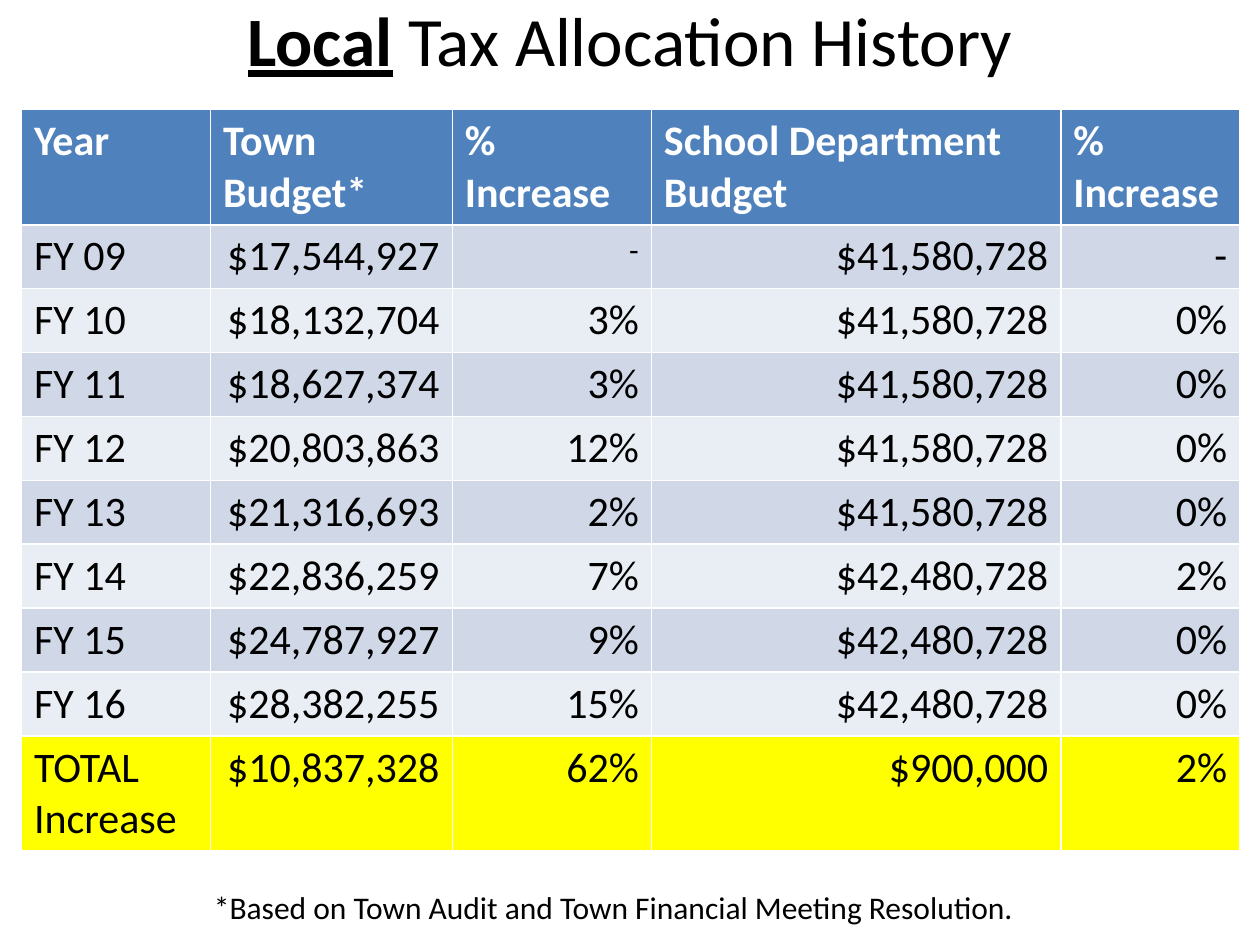
from pptx import Presentation
from pptx.dml.color import RGBColor
from pptx.enum import text
from pptx.util import Inches, Pt


def style(span, color="000000", **values):
    """Apply font values and a hex colour to a run."""
    values = {"name": "Calibri", "bold": False, **values}
    for key, value in values.items():
        setattr(span.font, key, value)
    span.font.color.rgb = RGBColor.from_string(color)


deck = Presentation()
deck.slide_width, deck.slide_height = Inches(10), Inches(7.5)
page = deck.slides.add_slide(deck.slide_layouts[5])

# Title
title = page.shapes.title
title.left, title.top = Inches(0.5), Inches(0)
title.width, title.height = Inches(9), Inches(0.62)
frame = title.text_frame
frame.auto_size = text.MSO_AUTO_SIZE.NONE
frame.vertical_anchor = text.MSO_ANCHOR.MIDDLE
para = frame.paragraphs[0]
para.alignment = text.PP_ALIGN.CENTER
for words, strong in [("Local", True), (" Tax Allocation History", False)]:
    span = para.add_run()
    span.text = words
    style(span, size=Pt(39.6), bold=strong, underline=strong)

# Budget table; the default table style supplies the white borders
rows = [
    ("Year", "Town Budget*", "% Increase", "School Department Budget", "% Increase"),
    ("FY 09", "$17,544,927", "-", "$41,580,728", "-"),
    ("FY 10", "$18,132,704", "3%", "$41,580,728", "0%"),
    ("FY 11", "$18,627,374", "3%", "$41,580,728", "0%"),
    ("FY 12", "$20,803,863", "12%", "$41,580,728", "0%"),
    ("FY 13", "$21,316,693", "2%", "$41,580,728", "0%"),
    ("FY 14", "$22,836,259", "7%", "$42,480,728", "2%"),
    ("FY 15", "$24,787,927", "9%", "$42,480,728", "0%"),
    ("FY 16", "$28,382,255", "15%", "$42,480,728", "0%"),
    ("TOTAL Increase", "$10,837,328", "62%", "$900,000", "2%"),
]
widths = [1.5, 1.92, 1.58, 3.25, 1.42]
header_height, row_height = 0.88, 0.5
fills = ["4F81BD"] + ["D0D8E8", "E9EDF4"] * 4 + ["FFFF00"]

table = page.shapes.add_table(
    len(rows), len(widths), Inches(0.17), Inches(0.87), Inches(sum(widths)),
    Inches(header_height + row_height * (len(rows) - 1))).table
for column, width in zip(table.columns, widths):
    column.width = Inches(width)

for r, (values, fill) in enumerate(zip(rows, fills)):
    header = r == 0
    table.rows[r].height = Inches(header_height if header else row_height)
    for c, value in enumerate(values):
        cell = table.cell(r, c)
        cell.fill.solid()
        cell.fill.fore_color.rgb = RGBColor.from_string(fill)
        para = cell.text_frame.paragraphs[0]
        if c and not header:
            para.alignment = text.PP_ALIGN.RIGHT
        span = para.add_run()
        span.text = value
        small_dash = (r, c) == (1, 2)
        style(span, "FFFFFF" if header else "000000",
              size=Pt(18 if small_dash else 24), bold=header)

# Footnote
box = page.shapes.add_textbox(Inches(0.83), Inches(7), Inches(8.08), Inches(0.4))
box.text_frame.word_wrap = True
box.text_frame.auto_size = text.MSO_AUTO_SIZE.SHAPE_TO_FIT_TEXT
para = box.text_frame.paragraphs[0]
para.alignment = text.PP_ALIGN.CENTER
span = para.add_run()
span.text = "*Based on Town Audit and Town Financial Meeting Resolution."
style(span, size=Pt(18))

deck.save("out.pptx")
